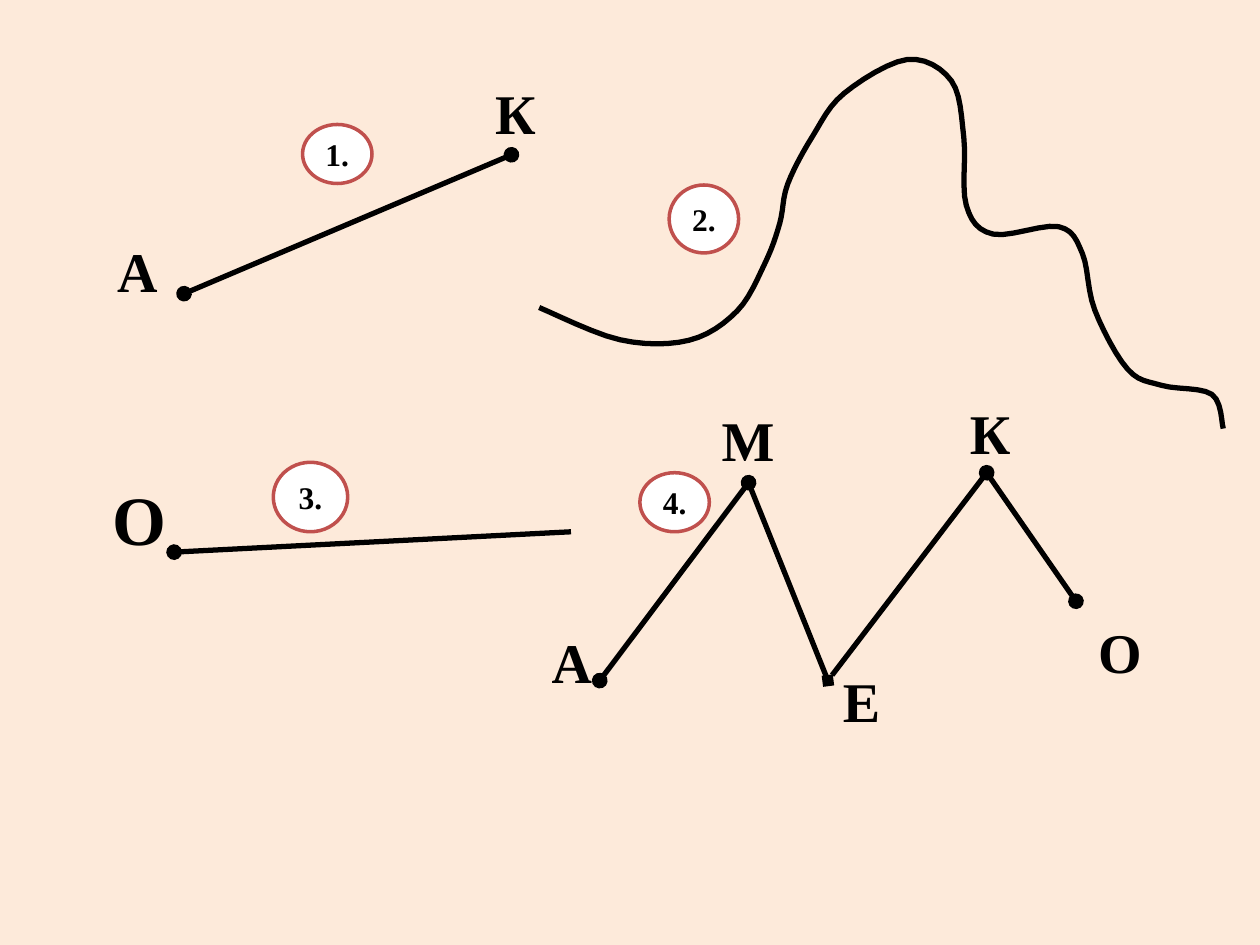
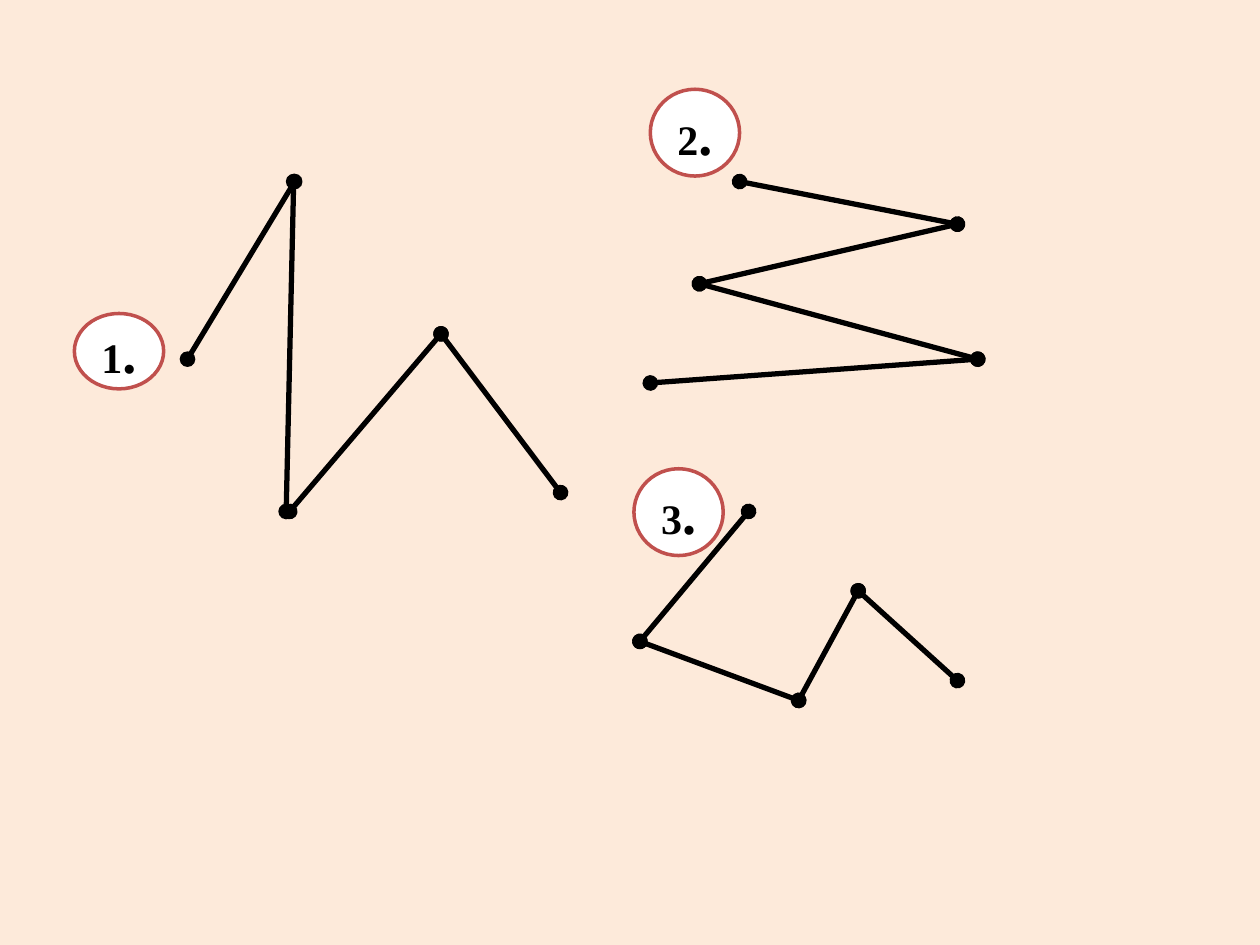
from itertools import pairwise

from lxml import etree
from pptx import Presentation
from pptx.dml.color import RGBColor
from pptx.enum.shapes import MSO_CONNECTOR, MSO_SHAPE
from pptx.enum.text import MSO_ANCHOR, PP_ALIGN
from pptx.oxml.ns import qn
from pptx.util import Cm, Pt

STRAIGHT = MSO_CONNECTOR.STRAIGHT
OVAL = MSO_SHAPE.OVAL
MIDDLE = MSO_ANCHOR.MIDDLE
CENTER = PP_ALIGN.CENTER

FONT = "Times New Roman"
COLORS = {"background": "FDEADA", "ink": "000000", "badge": "FFFFFF", "ring": "C0504D"}
LINE_WIDTH, RING_WIDTH = Pt(3), Pt(2)
LETTER_BOX = (1.8, 1.63)  # width and height in cm
DOT, DIAMOND = "oval", "diamond"  # marks at line ends
CURVE_STEPS = 6  # straight pieces between two knots

# All positions below are (x, y) in cm; each part of the curve ends at a knot
CURVE_PARTS = {
    "valley": [(10.87, 6.2), (12.5, 6.85), (13.89, 6.86)],
    "climb": [(14.86, 6.27), (15.42, 5.31), (15.72, 4.5), (15.88, 3.71), (16.38, 2.75)],
    "peak": [(17.02, 1.88), (18.29, 1.2), (19.18, 1.63)],
    "drop": [(19.43, 2.77), (19.48, 4.14)],
    "ledge": [(20.02, 4.72), (21.34, 4.57), (21.82, 5.11)],
    "descent": [(22.07, 6.25), (22.73, 7.44), (23.42, 7.77), (24.43, 7.95), (24.66, 8.64)],
}


def rgb(name):
    return RGBColor.from_string(COLORS[name])


def add_slide(prs):
    s = prs.slides.add_slide(prs.slide_layouts[6])
    s.background.fill.solid()
    s.background.fill.fore_color.rgb = rgb("background")
    return s


def add_run(p, text, size):
    r = p.add_run()
    r.text = text
    r.font.name = FONT
    r.font.size = Pt(size)
    r.font.bold = True
    r.font.color.rgb = rgb("ink")


def style_line(line):
    line.width = LINE_WIDTH
    line.color.rgb = rgb("ink")


def add_segment(s, start, end, head=DOT, tail=DOT):
    """Straight line with optional end marks."""
    sp = s.shapes.add_connector(STRAIGHT, *(Cm(v) for v in (*start, *end)))
    style_line(sp.line)
    ln = sp.line._get_or_add_ln()
    for tag, mark in (("a:headEnd", head), ("a:tailEnd", tail)):
        if mark:
            etree.SubElement(ln, qn(tag), type=mark)
    etree.SubElement(sp._element.spPr, qn("a:effectLst"))


def add_broken_line(s, points, marks=None):
    """Joined segments; marks gives the end mark of each one."""
    links = list(pairwise(points))
    for (start, end), mark in zip(links, marks or [DOT] * len(links)):
        add_segment(s, start, end, mark, mark)


def smooth(knots):
    """Points of a Catmull-Rom spline through the knots."""
    padded = [knots[0], *knots, knots[-1]]
    points = [knots[0]]
    for before, start, end, after in zip(padded, padded[1:], padded[2:], padded[3:]):
        for step in range(1, CURVE_STEPS + 1):
            t = step / CURVE_STEPS
            points.append(tuple(
                b + t / 2 * (c - a + t * (2 * a - 5 * b + 4 * c - d + t * (3 * (b - c) + d - a)))
                for a, b, c, d in zip(before, start, end, after)
            ))
    return points


def add_curve(s, knots):
    """Open smooth line."""
    first, *rest = [(Cm(x), Cm(y)) for x, y in smooth(knots)]
    builder = s.shapes.build_freeform(*first)
    builder.add_line_segments(rest, close=False)
    sp = builder.convert_to_shape()
    sp.shadow.inherit = False
    sp.fill.background()
    style_line(sp.line)


def add_letter(s, letter, point, offset, size=32):
    """Name of a point, its box shifted from the point by offset."""
    left, top = (v + shift for v, shift in zip(point, offset))
    sp = s.shapes.add_textbox(*(Cm(v) for v in (left, top, *LETTER_BOX)))
    tf = sp.text_frame
    tf.word_wrap = True
    add_run(tf.paragraphs[0], letter, size)


def add_badge(s, number, corner, size, number_size, dot_size):
    """Numbered oval next to a figure."""
    sp = s.shapes.add_shape(OVAL, *(Cm(v) for v in (*corner, *size)))
    sp.shadow.inherit = False
    sp.fill.solid()
    sp.fill.fore_color.rgb = rgb("badge")
    sp.line.color.rgb = rgb("ring")
    sp.line.width = RING_WIDTH
    tf = sp.text_frame
    tf.margin_left = tf.margin_right = tf.margin_top = tf.margin_bottom = 0
    tf.word_wrap = False
    tf.vertical_anchor = MIDDLE
    p = tf.paragraphs[0]
    p.alignment = CENTER
    if number_size == dot_size:
        add_run(p, f"{number}.", number_size)
    else:
        add_run(p, str(number), number_size)
        add_run(p, ".", dot_size)


def add_badges(s, places, number_size, dot_size):
    """Badges numbered from 1, at (corner, size) places."""
    for number, (corner, size) in enumerate(places, start=1):
        add_badge(s, number, corner, size, number_size, dot_size)


def build_line_types(prs):
    s = add_slide(prs)

    # 1: segment АК
    a, k = (3.71, 5.92), (10.31, 3.12)
    add_segment(s, a, k)
    add_letter(s, "А", a, (-1.6, -1.27))
    add_letter(s, "К", k, (-0.58, -1.67))

    # 2: curve
    add_curve(s, [knot for part in CURVE_PARTS.values() for knot in part])

    # 3: ray from О
    o = (3.51, 11.13)
    add_segment(s, o, (11.51, 10.72), tail=None)
    add_letter(s, "О", o, (-1.5, -1.66), size=39.6)

    # 4: broken line АМЕКО, each vertex with the offset of its letter
    vertices = {
        "А": ((12.09, 13.72), (-1.22, -1.2)),
        "М": ((15.09, 9.73), (-0.79, -1.68)),
        "Е": ((16.69, 13.72), (0.05, -0.41)),
        "К": ((19.89, 9.53), (-0.59, -1.63)),
        "О": ((21.69, 12.12), (0.2, 0.2)),
    }
    add_broken_line(s, [point for point, _ in vertices.values()], [DOT, None, DIAMOND, DOT])
    for letter, (point, offset) in vertices.items():
        add_letter(s, letter, point, offset)

    # Figure numbers
    flat, tall, large = (1.4, 1.19), (1.4, 1.37), (1.5, 1.4)
    places = [
        ((6.1, 2.51), flat), ((13.49, 3.73), tall),
        ((5.51, 9.32), large), ((12.9, 9.53), flat),
    ]
    add_badges(s, places, number_size=18, dot_size=18)


def build_broken_lines(prs):
    s = add_slide(prs)

    # 1: zigzag in three pieces that meet with small gaps
    add_broken_line(s, [(5.77, 10.31), (5.92, 3.66)])
    add_broken_line(s, [(3.78, 7.24), (5.94, 3.66)])
    add_broken_line(s, [(5.84, 10.31), (8.89, 6.73), (11.3, 9.93)])

    # 2: sideways zigzag
    add_broken_line(s, [(14.91, 3.66), (19.3, 4.52), (14.1, 5.72), (19.71, 7.24), (13.11, 7.72)])

    # 3: open hook
    add_broken_line(s, [(15.09, 10.31), (12.9, 12.93), (16.1, 14.12), (17.3, 11.91), (19.3, 13.72)])

    # Figure numbers
    flat, tall = (1.8, 1.52), (1.8, 1.75)
    places = [((1.5, 6.32), flat), ((13.11, 1.8), tall), ((12.78, 9.45), tall)]
    add_badges(s, places, number_size=24, dot_size=32)


def main():
    prs = Presentation()
    prs.slide_width, prs.slide_height = Cm(25.4), Cm(19.05)
    build_line_types(prs)
    build_broken_lines(prs)
    prs.save("out.pptx")


if __name__ == "__main__":
    main()
